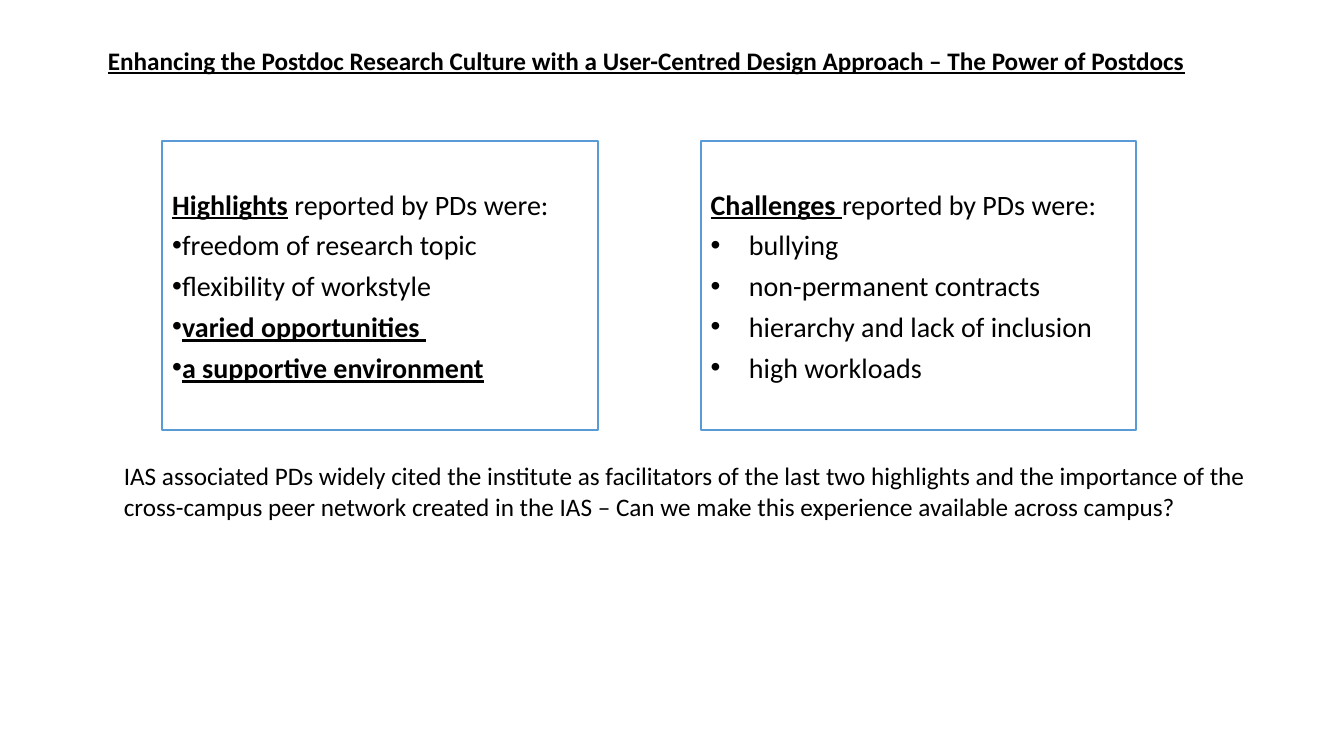
import pptx
import pptx.util
import pptx.dml.color
import pptx.enum.shapes
import pptx.enum.text
import pptx.oxml.ns
from lxml import etree
from pptx.util import Inches

COLOURS = {"text": "000000", "border": "5B9BD5"}
TITLE_ONLY_LAYOUT = 5


class SlideBuilder:
    font_name = "Calibri"
    body_size = 18
    panel_size = 20

    def __init__(self, presentation):
        layout = presentation.slide_layouts[TITLE_ONLY_LAYOUT]
        self.slide = presentation.slides.add_slide(layout)

    def colour(self, name):
        return pptx.dml.color.RGBColor.from_string(COLOURS[name])

    def format_run(self, run, size, strong=False):
        """Apply the slide font; strong text is bold and underlined."""
        run.font.name = self.font_name
        run.font.size = pptx.util.Pt(size)
        run.font.color.rgb = self.colour("text")
        run.font.bold = strong
        run.font.underline = strong

    def fill_frame(self, frame, text, strong=False):
        """Put one left-aligned paragraph in a wrapping, top-anchored frame."""
        frame.text = text
        frame.word_wrap = True
        frame.auto_size = pptx.enum.text.MSO_AUTO_SIZE.NONE
        frame.vertical_anchor = pptx.enum.text.MSO_ANCHOR.TOP
        paragraph = frame.paragraphs[0]
        paragraph.alignment = pptx.enum.text.PP_ALIGN.LEFT
        self.format_run(paragraph.runs[0], self.body_size, strong)

    def title(self, text, left, top, width, height):
        shape = self.slide.shapes.title
        shape.left, shape.top = Inches(left), Inches(top)
        shape.width, shape.height = Inches(width), Inches(height)
        self.fill_frame(shape.text_frame, text, strong=True)

    def text_box(self, text, left, top, width, height):
        shape = self.slide.shapes.add_textbox(
            Inches(left), Inches(top), Inches(width), Inches(height))
        self.fill_frame(shape.text_frame, text)

    def add_bullet(self, paragraph, indent):
        properties = paragraph._p.get_or_add_pPr()
        properties.set("marL", str(Inches(indent)))
        properties.set("indent", str(-Inches(indent)))
        font = etree.SubElement(properties, pptx.oxml.ns.qn("a:buFont"))
        font.set("typeface", "Arial")
        bullet = etree.SubElement(properties, pptx.oxml.ns.qn("a:buChar"))
        bullet.set("char", "•")

    def panel(self, left, heading, lead, items, indent):
        """Draw a bordered list; items are (text, strong) pairs."""
        shape = self.slide.shapes.add_shape(
            pptx.enum.shapes.MSO_SHAPE.RECTANGLE,
            Inches(left), Inches(1.4), Inches(4.32), Inches(2.87))
        shape.shadow.inherit = False
        shape.fill.background()
        shape.line.color.rgb = self.colour("border")
        shape.line.width = pptx.util.Pt(1.25)
        frame = shape.text_frame
        frame.word_wrap = True
        frame.vertical_anchor = pptx.enum.text.MSO_ANCHOR.TOP
        frame.margin_top = Inches(0.52)

        lines = [[(heading, True), (lead, False)]] + [[item] for item in items]
        for index, line in enumerate(lines):
            paragraph = frame.add_paragraph() if index else frame.paragraphs[0]
            paragraph.alignment = pptx.enum.text.PP_ALIGN.LEFT
            paragraph.line_spacing = 0.8
            if index:
                paragraph.space_before = pptx.util.Pt(10)
                self.add_bullet(paragraph, indent)
            for text, strong in line:
                run = paragraph.add_run()
                run.text = text
                self.format_run(run, self.panel_size, strong)


def main():
    presentation = pptx.Presentation()
    presentation.slide_width = Inches(13.33)
    presentation.slide_height = Inches(7.5)
    builder = SlideBuilder(presentation)

    builder.title(
        "Enhancing the Postdoc Research Culture with a User-Centred Design "
        "Approach – The Power of Postdocs", 0.97, 0.4, 11.11, 0.4)
    builder.panel(
        1.61, "Highlights", " reported by PDs were:",
        [("freedom of research topic", False),
         ("flexibility of workstyle", False),
         ("varied opportunities ", True),
         ("a supportive environment", True)], indent=0)
    builder.panel(
        6.95, "Challenges ", "reported by PDs were:",
        [("bullying", False),
         ("non-permanent contracts", False),
         ("hierarchy and lack of inclusion", False),
         ("high workloads", False)], indent=0.38)
    builder.text_box(
        "IAS associated PDs widely cited the institute as facilitators of the "
        "last two highlights and the importance of the cross-campus peer "
        "network created in the IAS – Can we make this experience available "
        "across campus?", 1.13, 4.52, 11.65, 0.71)

    presentation.save("out.pptx")


if __name__ == "__main__":
    main()
